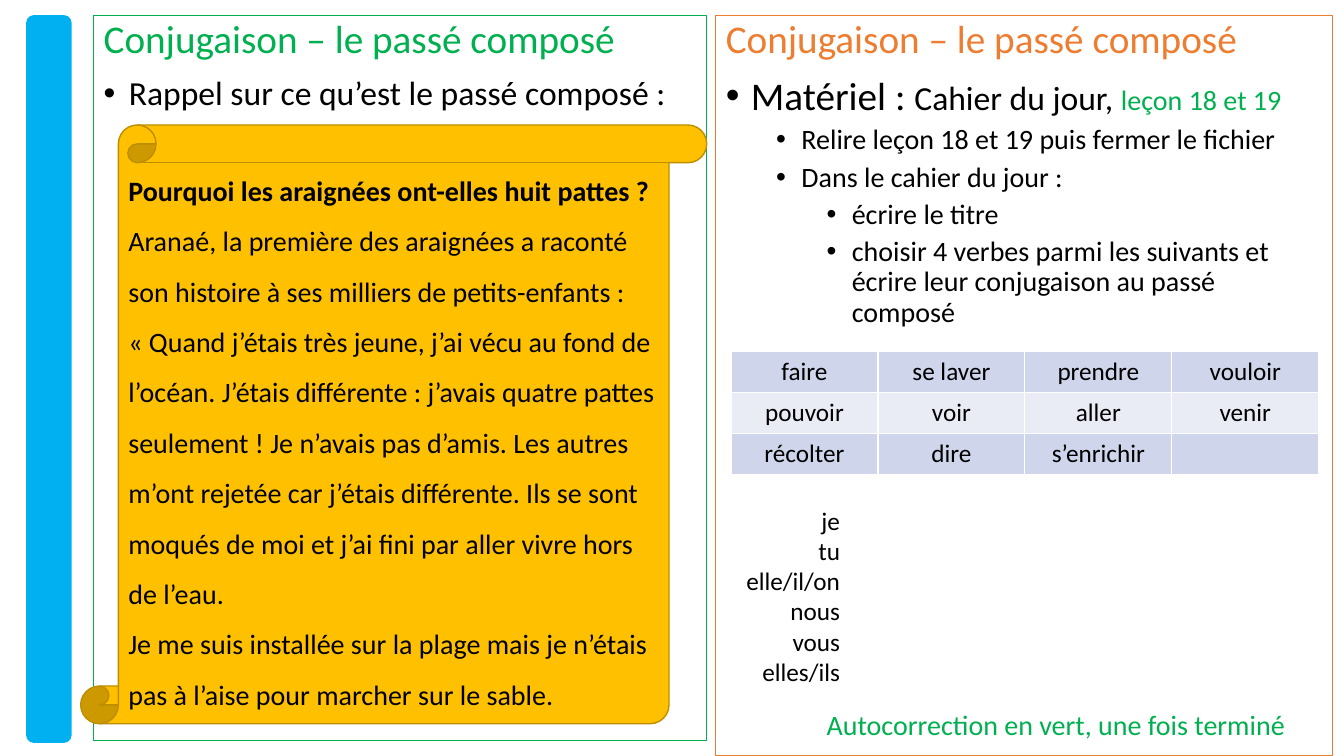
from pptx import Presentation
from pptx import util as u
from pptx.dml.color import RGBColor
from pptx.enum import shapes, text
from pptx.oxml.ns import qn
from lxml import etree

INK = {"black": "000000", "green": "00B050", "orange": "ED7D31", "blue": "00B0F0",
       "gold": "FFC000", "brown": "BD8E00", "dark": "CFD5EA", "light": "E9EBF5"}
TITLE = "Conjugaison – le passé composé"
STORY = [
    "Pourquoi les araignées ont-elles huit pattes ?",
    "Aranaé, la première des araignées a raconté son histoire à ses milliers de petits-enfants :",
    "« Quand j’étais très jeune, j’ai vécu au fond de l’océan. J’étais différente : j’avais quatre "
    "pattes seulement ! Je n’avais pas d’amis. Les autres m’ont rejetée car j’étais différente. "
    "Ils se sont moqués de moi et j’ai fini par aller vivre hors de l’eau.",
    "Je me suis installée sur la plage mais je n’étais pas à l’aise pour marcher sur le sable.",
]
TASKS = [
    (1, "Relire leçon 18 et 19 puis fermer le fichier"),
    (1, "Dans le cahier du jour :"),
    (2, "écrire le titre"),
    (2, "choisir 4 verbes parmi les suivants et écrire leur conjugaison au passé composé"),
]
VERBS = [
    ["faire", "se laver", "prendre", "vouloir"],
    ["pouvoir", "voir", "aller", "venir"],
    ["récolter", "dire", "s’enrichir", ""],
]
PERSONS = ["je", "tu", "elle/il/on", "nous", "vous", "elles/ils"]


def color(name):
    return RGBColor.from_string(INK[name])


def style(font, size, ink="black", bold=False):
    font.name = "Calibri"
    font.size = u.Pt(size)
    font.bold = bold
    font.color.rgb = color(ink)


def draw(slide, kind, box, fill=None, line=None, width=0.75):
    shape = slide.shapes.add_shape(kind, *map(u.Inches, box))
    shape.shadow.inherit = False
    if fill:
        shape.fill.solid()
        shape.fill.fore_color.rgb = color(fill)
    else:
        shape.fill.background()
    if line:
        shape.line.color.rgb = color(line)
        shape.line.width = u.Pt(width)
    else:
        shape.line.fill.background()
    return shape


def write(frame, lines, size, align=text.PP_ALIGN.LEFT, space=1.0, ink="black"):
    frame.word_wrap = True
    for i, line in enumerate(lines):
        para = frame.add_paragraph() if i else frame.paragraphs[0]
        para.text = line
        para.alignment = align
        para.line_spacing = space
        style(para.font, size, ink)


def bullet(frame, level, size, words=""):
    para = frame.add_paragraph()
    para.text = words
    para.level = level
    para.alignment = text.PP_ALIGN.LEFT
    para.line_spacing = 0.9
    para.space_before = u.Pt(5 if level else 10)
    style(para.font, size)
    props = para._p.get_or_add_pPr()
    props.set("marL", str(u.Inches(0.25 + 0.5 * level)))
    props.set("indent", str(u.Inches(-0.25)))
    etree.SubElement(props, qn("a:buFont")).set("typeface", "Arial")
    etree.SubElement(props, qn("a:buChar")).set("char", "•")
    return para


def panel(slide, box, ink):
    frame = draw(slide, shapes.MSO_SHAPE.RECTANGLE, box, line=ink).text_frame
    frame.vertical_anchor = text.MSO_ANCHOR.TOP
    write(frame, [TITLE], 28, space=0.9, ink=ink)
    return frame


def label(slide, box, lines, size, align, ink="black"):
    frame = slide.shapes.add_textbox(*map(u.Inches, box)).text_frame
    write(frame, lines, size, align, ink=ink)


def grid(slide, box):
    table = slide.shapes.add_table(len(VERBS), len(VERBS[0]), *map(u.Inches, box)).table
    table.first_row = table.horz_banding = False
    for r, row in enumerate(VERBS):
        for c, verb in enumerate(row):
            cell = table.cell(r, c)
            cell.fill.solid()
            cell.fill.fore_color.rgb = color("light" if r % 2 else "dark")
            write(cell.text_frame, [verb], 18, text.PP_ALIGN.CENTER)


def recall(slide, box):
    x, y, w, h = box
    frame = panel(slide, box, "green")
    bullet(frame, 0, 24, "Rappel sur ce qu’est le passé composé :")
    scroll = draw(slide, shapes.MSO_SHAPE.VERTICAL_SCROLL, (x - 0.13, y + 1.09, w + 0.13, 5.94),
                  "gold", "brown", 1)
    scroll.adjustments[0] = 0.063
    scroll.text_frame.vertical_anchor = text.MSO_ANCHOR.MIDDLE
    write(scroll.text_frame, STORY, 20, space=1.5)
    scroll.text_frame.paragraphs[0].font.bold = True


def task(slide, box):
    x, y, w, h = box
    frame = panel(slide, box, "orange")
    para = bullet(frame, 0, 28)
    for words, size, ink in [("Matériel : ", 28, "black"), ("Cahier du jour, ", 24, "black"),
                             ("leçon 18 et 19", 20, "green")]:
        run = para.add_run()
        run.text = words
        style(run.font, size, ink)
    for level, words in TASKS:
        bullet(frame, level, 20, words)
    grid(slide, (x + 0.15, y + 3.34, 5.83, 1.22))
    label(slide, (x + 0.15, y + 4.81, 1.18, 1.92), PERSONS, 18, text.PP_ALIGN.RIGHT)
    label(slide, (x + 1, y + 6.82, w - 1, 0.4), ["Autocorrection en vert, une fois terminé"],
          20, text.PP_ALIGN.LEFT, "green")


def main():
    deck = Presentation()
    deck.slide_width, deck.slide_height = u.Inches(13.33), u.Inches(7.5)
    slide = deck.slides.add_slide(deck.slide_layouts[6])
    draw(slide, shapes.MSO_SHAPE.ROUNDED_RECTANGLE, (0.26, 0.15, 0.45, 7.22), "blue")
    recall(slide, (0.93, 0.15, 6.08, 7.2))
    task(slide, (7.1, 0.15, 6.12, 7.35))
    deck.save("out.pptx")


if __name__ == "__main__":
    main()
